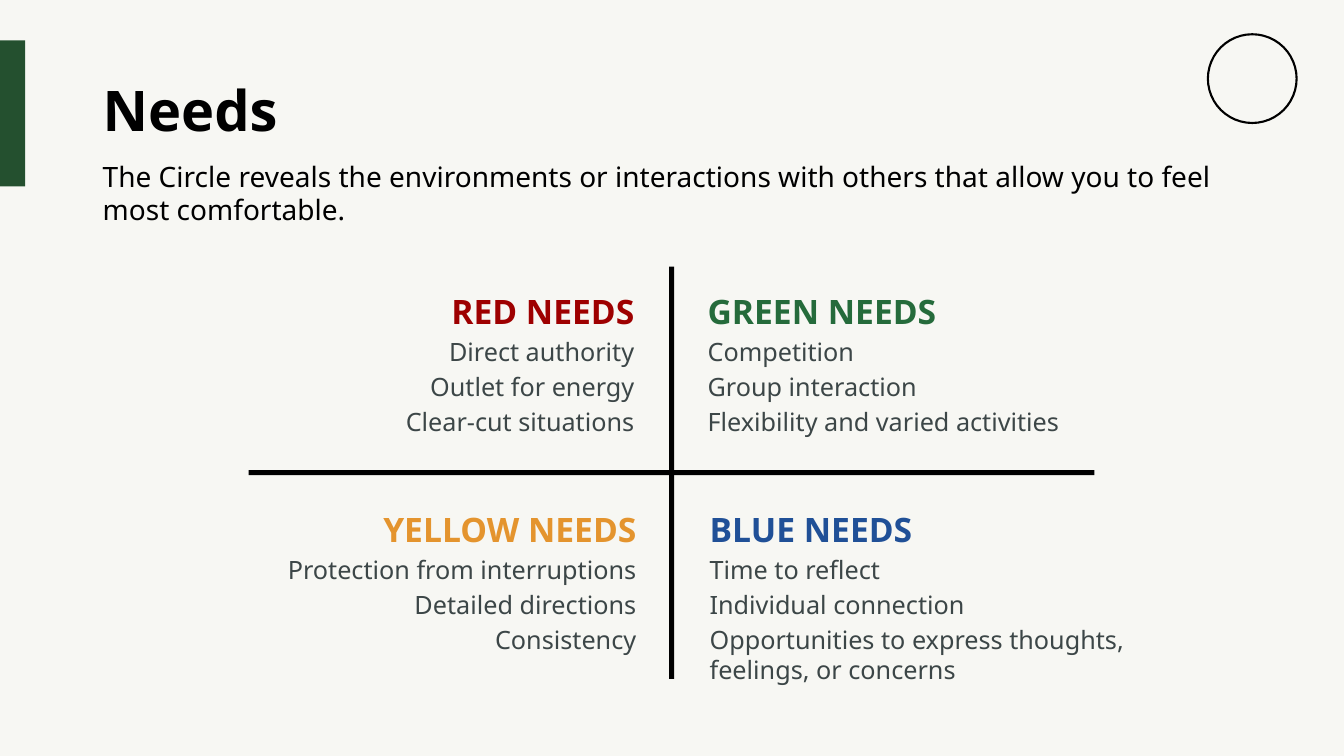
from dataclasses import dataclass

from pptx import Presentation
from pptx.dml.color import RGBColor
from pptx.enum.shapes import MSO_SHAPE
from pptx.enum.text import MSO_ANCHOR, PP_ALIGN
from pptx.util import Inches, Pt

RECT, OVAL = MSO_SHAPE.RECTANGLE, MSO_SHAPE.OVAL
LEFT, RIGHT = PP_ALIGN.LEFT, PP_ALIGN.RIGHT
TOP, MIDDLE = MSO_ANCHOR.TOP, MSO_ANCHOR.MIDDLE


@dataclass(frozen=True)
class Theme:
    font: str = "Noto Sans"
    paper: str = "F7F7F3"
    ink: str = "000000"
    body: str = "3C4647"
    accent: str = "24502F"
    title_size: int = 40
    intro_size: int = 20
    heading_size: int = 24
    need_size: int = 18
    need_gap: float = 3.4


THEME = Theme()
TITLE = "Needs"
INTRO = ("The Circle reveals the environments or interactions with others "
         "that allow you to feel most comfortable.")
# (column, row): heading, colour, panel width, panel height, needs
QUADRANTS = {
    (1, 1): ("BLUE NEEDS", "205097", 5.27, 1.84,
             ["Time to reflect", "Individual connection",
              "Opportunities to express thoughts, feelings, or concerns"]),
    (0, 1): ("YELLOW NEEDS", "E4942E", 3.84, 1.82,
             ["Protection from interruptions", "Detailed directions", "Consistency"]),
    (1, 0): ("GREEN NEEDS", "256B3B", 4.12, 1.82,
             ["Competition", "Group interaction", "Flexibility and varied activities"]),
    (0, 0): ("RED NEEDS", "9E0000", 3.17, 1.58,
             ["Direct authority", "Outlet for energy", "Clear-cut situations"]),
}

SLIDE_W, SLIDE_H = 13.33, 7.5
MARGIN = 0.92
CONTENT_W = SLIDE_W - 2 * MARGIN
BAND_TOP, BAND_H = 0.4, 1.45
CENTRE_X, CENTRE_Y = 6.66, 4.69
AXIS_THICK = 0.05
AXES = ((4.09, 90), (8.39, 0))  # length, rotation
INNER_EDGES = (6.39, 6.92)
ROW_TOPS = (2.84, 5.0)
ROW_SHIFT = 0.02

prs = Presentation()
prs.slide_width, prs.slide_height = Inches(SLIDE_W), Inches(SLIDE_H)
slide = prs.slides.add_slide(prs.slide_layouts[6])
slide.background.fill.solid()
slide.background.fill.fore_color.rgb = RGBColor.from_string(THEME.paper)


def add_figure(kind, x, y, w, h, fill, line=None):
    figure = slide.shapes.add_shape(kind, Inches(x), Inches(y), Inches(w), Inches(h))
    figure.shadow.inherit = False
    figure.fill.solid()
    figure.fill.fore_color.rgb = RGBColor.from_string(fill)
    if line:
        figure.line.color.rgb = RGBColor.from_string(line)
        figure.line.width = Pt(1.5)
    else:
        figure.line.fill.background()
    return figure


def add_box(x, y, w, h):
    return slide.shapes.add_textbox(Inches(x), Inches(y), Inches(w), Inches(h))


def write(holder, lines, align=LEFT, anchor=TOP, gap=0, spacing=None):
    """Each line is (text, size, colour, bold); gap is the space before a line."""
    frame = holder.text_frame
    frame.word_wrap = True
    frame.vertical_anchor = anchor
    for index, (text, size, colour, bold) in enumerate(lines):
        paragraph = frame.add_paragraph() if index else frame.paragraphs[0]
        paragraph.alignment = align
        paragraph.space_before = Pt(gap if index else 0)
        paragraph.line_spacing = spacing
        run = paragraph.add_run()
        run.text = text
        run.font.name = THEME.font
        run.font.size = Pt(size)
        run.font.bold = bold
        run.font.color.rgb = RGBColor.from_string(colour)


add_figure(RECT, -0.11, BAND_TOP, 0.36, BAND_H, THEME.accent)
write(add_box(MARGIN, BAND_TOP, CONTENT_W, BAND_H),
      [(TITLE, THEME.title_size, THEME.ink, True)], anchor=MIDDLE, spacing=0.9)
write(add_box(MARGIN, 1.53, CONTENT_W, 0.77),
      [(INTRO, THEME.intro_size, THEME.ink, False)])

for length, rotation in AXES:
    axis = add_figure(RECT, CENTRE_X - length / 2, CENTRE_Y - AXIS_THICK / 2,
                      length, AXIS_THICK, THEME.ink)
    axis.rotation = rotation
add_figure(OVAL, 11.98, 0.34, 0.88, 0.88, THEME.paper, line=THEME.ink)

for (column, row), (heading, colour, width, height, needs) in QUADRANTS.items():
    left = INNER_EDGES[column] + row * ROW_SHIFT - (0 if column else width)
    panel = add_figure(RECT, left, ROW_TOPS[row], width, height, THEME.paper)
    lines = [(heading, THEME.heading_size, colour, True)]
    lines += [(need, THEME.need_size, THEME.body, False) for need in needs]
    write(panel, lines, align=LEFT if column else RIGHT, gap=THEME.need_gap)

prs.save("out.pptx")
